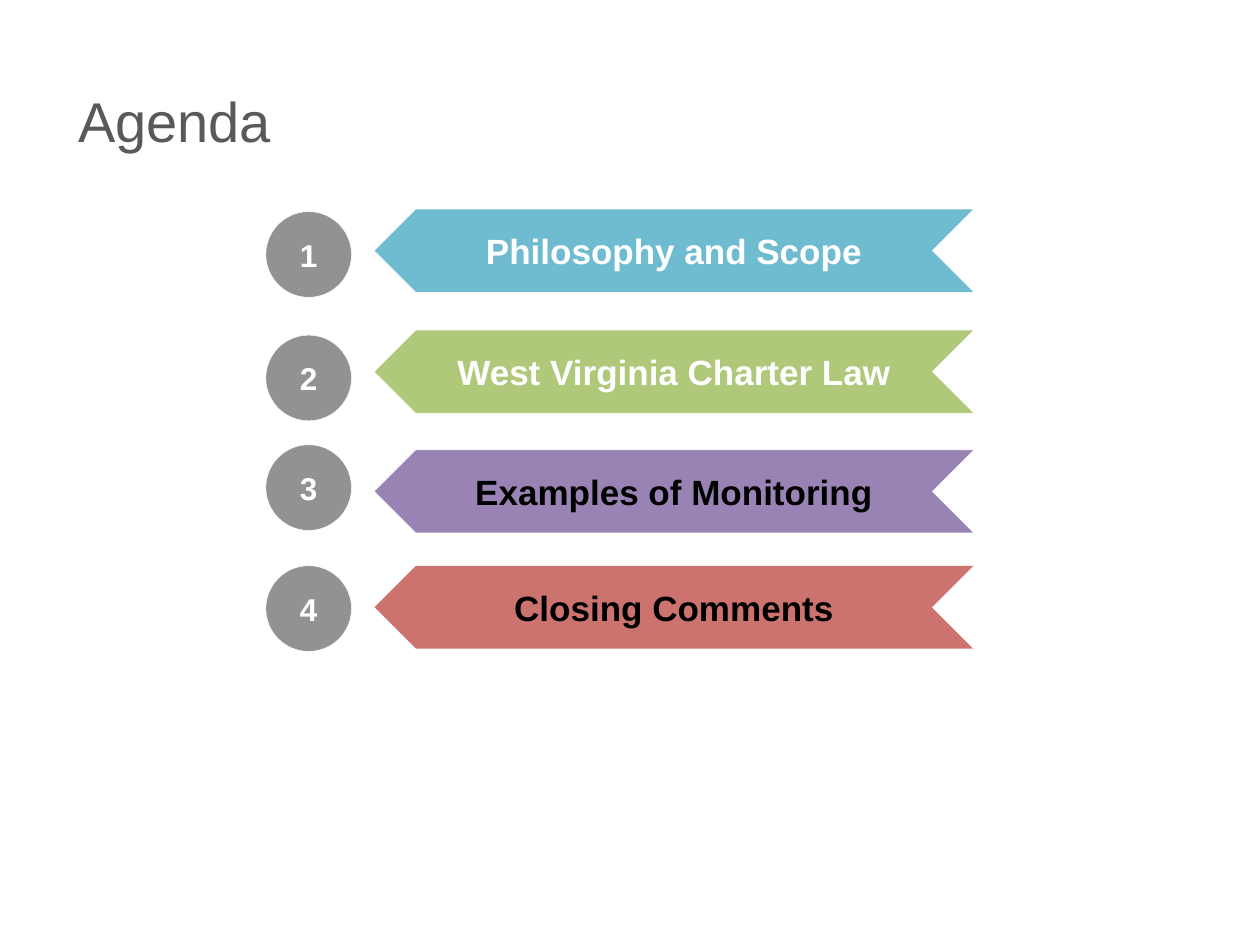
"""Build the agenda slide: four numbered ribbons under a title."""
from dataclasses import dataclass

from lxml.etree import SubElement
from pptx import Presentation
from pptx.dml.color import RGBColor as RGB
from pptx.enum.shapes import MSO_SHAPE as SHAPE
from pptx.enum.text import MSO_ANCHOR as ANCHOR, MSO_AUTO_SIZE as AUTOSIZE, PP_ALIGN as ALIGN
from pptx.oxml.ns import qn
from pptx.util import Pt

PX = 9144


@dataclass(frozen=True)
class Theme:
    font: str = "Arial"
    title: str = "595959"
    white: str = "FFFFFF"
    black: str = "000000"
    badge: str = "262626"
    blue: str = "4BACC6"
    green: str = "9BBB59"
    purple: str = "8064A2"
    red: str = "C0504D"
    title_size: int = 32
    ribbon_size: int = 20
    badge_size: int = 18


T = Theme()


def write(tf, text, size, color, bold, align):
    tf.word_wrap = True
    tf.text = text
    p = tf.paragraphs[0]
    p.alignment = align
    p.font.name, p.font.size, p.font.bold = T.font, Pt(size), bold
    p.font.color.rgb = RGB.from_string(color)


def add_label(s, kind, box, fill, alpha, text, size, color):
    sp = s.shapes.add_shape(kind, *(v * PX for v in box))
    sp.shadow.inherit = False
    sp.fill.solid()
    sp.fill.fore_color.rgb = RGB.from_string(fill)
    clr = sp.fill._xPr.find(qn("a:solidFill"))[0]
    SubElement(clr, qn("a:alpha"), val=str(alpha * 1000))
    sp.line.color.rgb = RGB.from_string(T.white)
    sp.line.width = Pt(0.25)
    tf = sp.text_frame
    tf.vertical_anchor = ANCHOR.MIDDLE
    tf.margin_left = tf.margin_right = tf.margin_top = tf.margin_bottom = 8 * PX
    write(tf, text, size, color, True, ALIGN.CENTER)
    return sp


prs = Presentation()
prs.slide_width, prs.slide_height = 1000 * PX, 750 * PX
s = prs.slides.add_slide(prs.slide_layouts[5])

title = s.shapes.title
title.left, title.top, title.width, title.height = (v * PX for v in (52, 60, 900, 87))
tf = title.text_frame
tf.auto_size = AUTOSIZE.NONE
tf.vertical_anchor = ANCHOR.TOP
tf.margin_top = 9 * PX
write(tf, "Agenda", T.title_size, T.title, False, ALIGN.LEFT)

agenda = [
    ("Philosophy and Scope", 166, 168, T.blue, T.white),
    ("West Virginia Charter Law", 262, 266, T.green, T.white),
    ("Examples of Monitoring", 357, 353, T.purple, T.black),
    ("Closing Comments", 449, 449, T.red, T.black),
]

for number, (topic, ribbon_top, badge_top, fill, color) in enumerate(agenda, 1):
    ribbon = add_label(s, SHAPE.CHEVRON, (297, ribbon_top, 476, 66), fill, 80,
                       topic, T.ribbon_size, color)
    ribbon._element.spPr.find(qn("a:xfrm")).set("flipH", "1")
    add_label(s, SHAPE.OVAL, (211, badge_top, 68, 68), T.badge, 50,
              str(number), T.badge_size, T.white)

prs.save("out.pptx")
